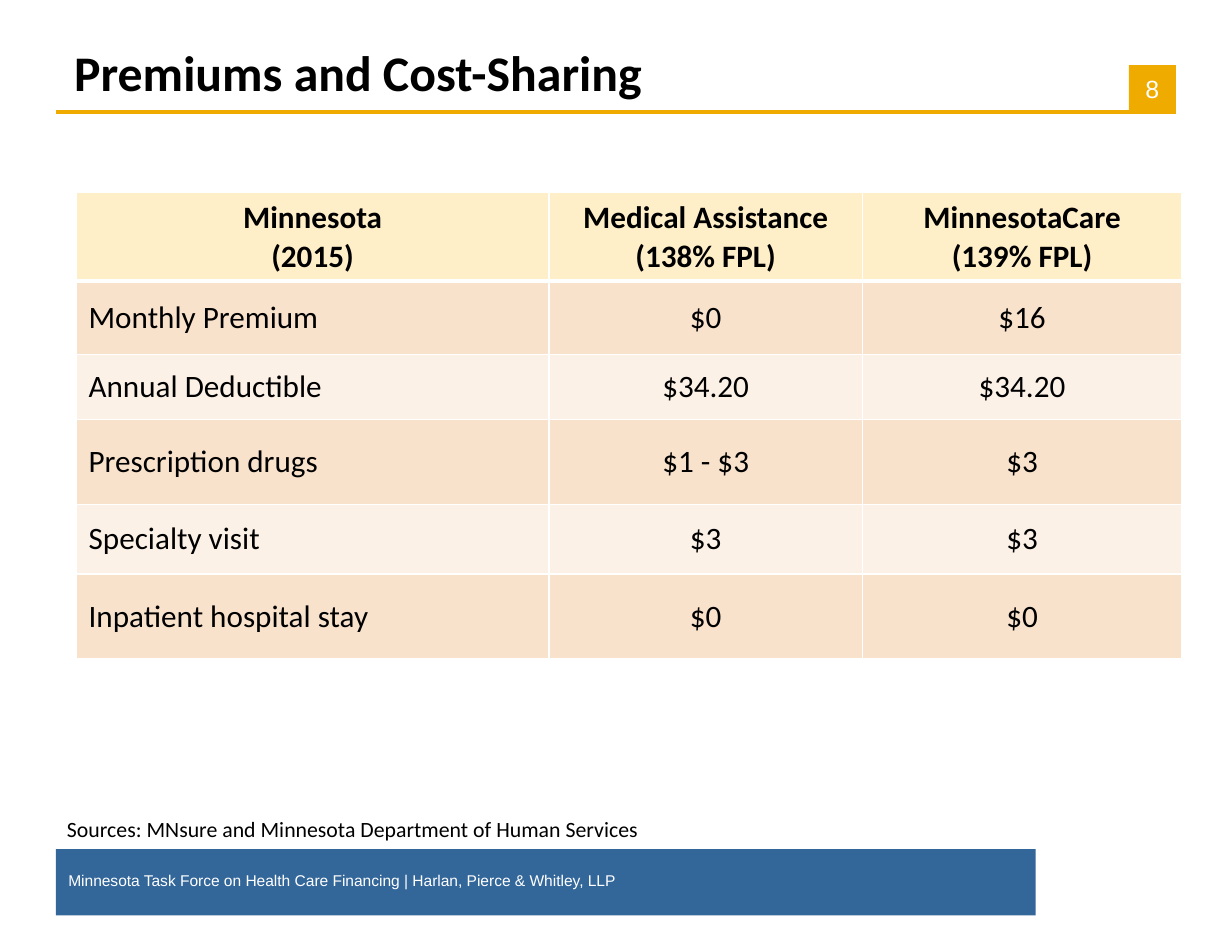
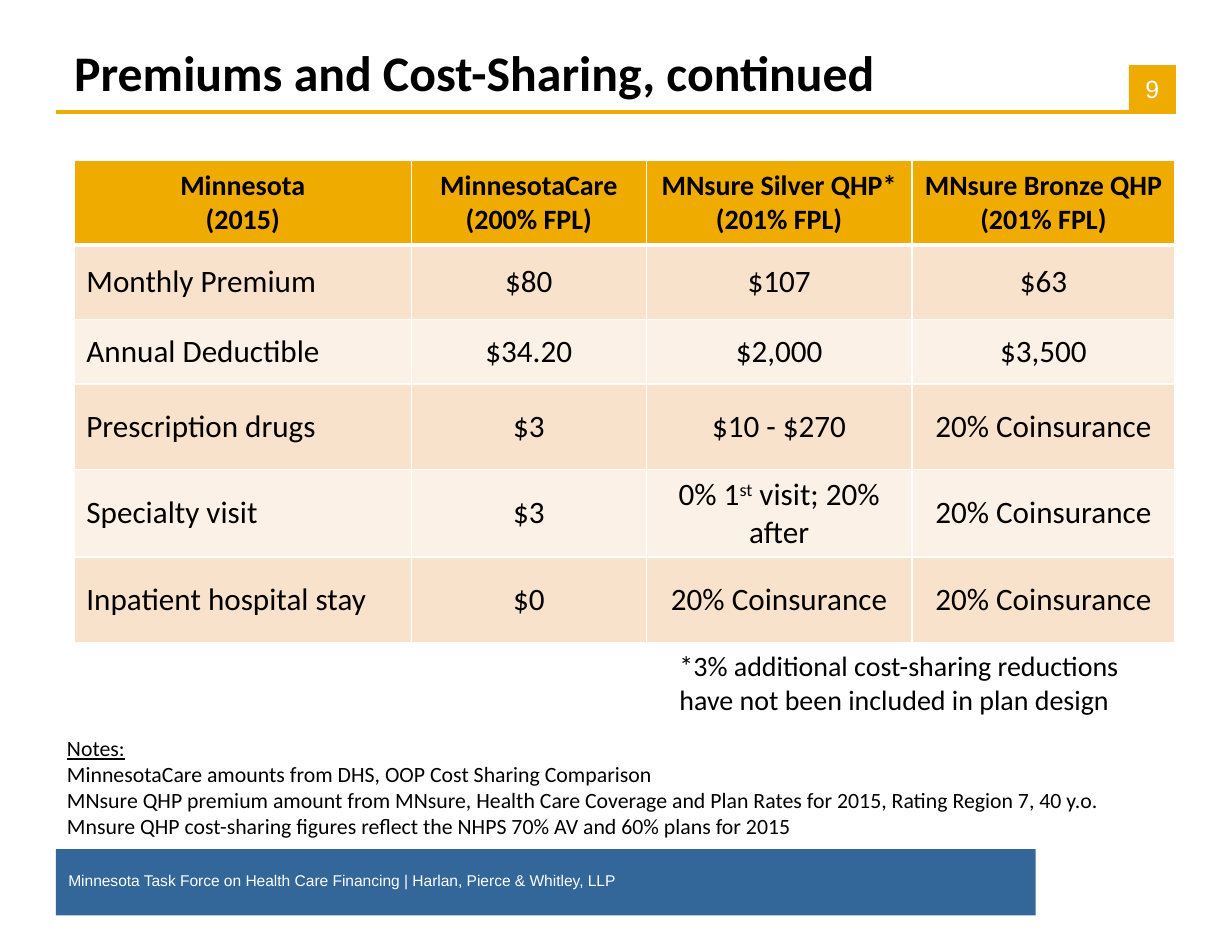
from pptx import Presentation
from pptx.dml.color import RGBColor
from pptx.enum.shapes import MSO_CONNECTOR, MSO_SHAPE
from pptx.enum.text import MSO_ANCHOR as ANCHOR, PP_ALIGN as ALIGN
from pptx.oxml.ns import qn
from pptx.util import Cm, Pt
from lxml.etree import SubElement

BLACK = RGBColor(0x00, 0x00, 0x00)
WHITE = RGBColor(0xFF, 0xFF, 0xFF)
GOLD = RGBColor(0xF0, 0xAB, 0x00)
BLUE = RGBColor(0x33, 0x66, 0x99)
CREAM = RGBColor(0xFF, 0xEF, 0xC9)
BANDS = (RGBColor(0xF9, 0xE2, 0xCC), RGBColor(0xFC, 0xF1, 0xE7))

TITLE = dict(name="Calibri", size=Pt(32), bold=True)
BODY = dict(name="Calibri", size=Pt(20), bold=False)
FOOTNOTE = dict(name="Calibri", size=Pt(18))
NOTE = dict(name="Calibri", size=Pt(14))
NUMBER = dict(name="Arial", size=Pt(16))
FOOTER = dict(name="Arial", size=Pt(10))

INSETS = (0.28, 0.15, 0.28, 0.15)
ROW_HEIGHTS = (1.93, 1.68, 1.47, 1.93, 1.57, 1.93)
FOOTER_TEXT = "Minnesota Task Force on Health Care Financing | Harlan, Pierce & Whitley, LLP"


def set_attrs(obj, values):
    for name, value in values.items():
        setattr(obj, name, value)


def set_insets(obj, insets):
    sides = ("margin_left", "margin_top", "margin_right", "margin_bottom")
    set_attrs(obj, {side: Cm(v) for side, v in zip(sides, insets)})


def write(tf, lines, style, color=BLACK, align=ALIGN.LEFT):
    for i, line in enumerate(lines):
        p = tf.paragraphs[0] if i == 0 else tf.add_paragraph()
        p.alignment = align
        for j, part in enumerate(line.split("^")):
            r = p.add_run()
            r.text = part
            set_attrs(r.font, style)
            r.font.color.rgb = color
            if j % 2:
                r.font._element.set("baseline", "30000")


def add_text(s, box, lines, style, color=BLACK, anchor=ANCHOR.TOP, insets=INSETS):
    tf = s.shapes.add_textbox(*map(Cm, box)).text_frame
    set_attrs(tf, dict(word_wrap=True, vertical_anchor=anchor))
    set_insets(tf, insets)
    write(tf, lines, style, color)
    return tf


def add_block(s, box, color):
    sp = s.shapes.add_shape(MSO_SHAPE.RECTANGLE, *map(Cm, box))
    sp.shadow.inherit = False
    sp.fill.solid()
    sp.fill.fore_color.rgb = color
    sp.line.fill.background()
    return sp


def add_rule(s, x1, x2, y):
    line = s.shapes.add_connector(MSO_CONNECTOR.STRAIGHT, Cm(x1), Cm(y), Cm(x2), Cm(y))
    line.line.color.rgb = GOLD
    line.line.width = Pt(2)
    SubElement(line._element.spPr, qn("a:effectLst"))


def set_borders(cell, widths):
    tc_pr = cell._tc.get_or_add_tcPr()
    for side, width in widths.items():
        ln = SubElement(tc_pr, qn(f"a:ln{side}"), w=str(Pt(width)))
        fill = SubElement(ln, qn("a:solidFill"))
        SubElement(fill, qn("a:srgbClr"), val=str(WHITE))


def add_cost_table(s, left, top, col_widths, rows, header_fill, header_size):
    frame = s.shapes.add_table(len(rows), len(col_widths), Cm(left), Cm(top),
                               Cm(sum(col_widths)), Cm(sum(ROW_HEIGHTS)))
    table = frame.table
    table.horz_banding = False
    for col, width in zip(table.columns, col_widths):
        col.width = Cm(width)
    for row, height in zip(table.rows, ROW_HEIGHTS):
        row.height = Cm(height)
    header_style = BODY | dict(size=Pt(header_size), bold=True)
    for i, values in enumerate(rows):
        fill = BANDS[(i - 1) % 2] if i else header_fill
        style = BODY if i else header_style
        for j, value in enumerate(values):
            cell = table.cell(i, j)
            set_borders(cell, dict(L=1, R=1, T=3 if i == 1 else 1, B=1 if i else 3))
            cell.fill.solid()
            cell.fill.fore_color.rgb = fill
            cell.vertical_anchor = ANCHOR.MIDDLE
            set_insets(cell, INSETS)
            align = ALIGN.LEFT if i and j == 0 else ALIGN.CENTER
            write(cell.text_frame, value.split("\n"), style, align=align)


def add_slide(prs, title, number):
    s = prs.slides.add_slide(prs.slide_layouts[6])
    add_block(s, (1.27, 19.26, 22.22, 1.5), BLUE)
    add_rule(s, 1.27, 26.67, 2.54)
    tf = add_block(s, (25.6, 1.48, 1.07, 1.06), GOLD).text_frame
    set_attrs(tf, dict(word_wrap=False, vertical_anchor=ANCHOR.MIDDLE))
    set_insets(tf, (0, 0, 0, 0))
    write(tf, [str(number)], NUMBER, WHITE, ALIGN.CENTER)
    add_text(s, (1.4, 0.81, 25.15, 1.65), [title], TITLE, anchor=ANCHOR.BOTTOM)
    tf = add_text(s, (1.27, 19.69, 17.98, 0.64), [FOOTER_TEXT], FOOTER, WHITE,
                  ANCHOR.MIDDLE, (0.28, 0, 0, 0))
    tf.paragraphs[0].line_spacing = 0.8
    return s


def add_assistance_slide(prs):
    s = add_slide(prs, "Premiums and Cost-Sharing", 8)
    rows = [
        ("Minnesota\n(2015)", "Medical Assistance\n(138% FPL)", "MinnesotaCare\n(139% FPL)"),
        ("Monthly Premium", "$0", "$16"),
        ("Annual Deductible", "$34.20", "$34.20"),
        ("Prescription drugs", "$1 - $3", "$3"),
        ("Specialty visit", "$3", "$3"),
        ("Inpatient hospital stay", "$0", "$0"),
    ]
    add_cost_table(s, 1.73, 4.37, (10.72, 7.11, 7.24), rows, CREAM, 20)
    add_text(s, (1.24, 18.36, 26.7, 0.89),
             ["Sources: MNsure and Minnesota Department of Human Services"], NOTE)


def add_marketplace_slide(prs):
    s = add_slide(prs, "Premiums and Cost-Sharing, continued", 9)
    rows = [
        ("Minnesota\n(2015)", "MinnesotaCare\n(200% FPL)",
         "MNsure Silver QHP*\n(201% FPL)", "MNsure Bronze QHP\n(201% FPL)"),
        ("Monthly Premium", "$80", "$107", "$63"),
        ("Annual Deductible", "$34.20", "$2,000", "$3,500"),
        ("Prescription drugs", "$3", "$10 - $270", "20% Coinsurance"),
        ("Specialty visit", "$3", "0% 1^st^ visit; 20% after", "20% Coinsurance"),
        ("Inpatient hospital stay", "$0", "20% Coinsurance", "20% Coinsurance"),
    ]
    add_cost_table(s, 1.68, 3.63, (7.65, 5.33, 6.02, 5.97), rows, GOLD, 18)
    add_text(s, (15.16, 14.58, 11.3, 1.8),
             ["*3% additional cost-sharing reductions have not been included in plan design"],
             FOOTNOTE, insets=(0.25, 0.13, 0.25, 0.13))
    notes = [
        "Notes:",
        "MinnesotaCare amounts from DHS, OOP Cost Sharing Comparison",
        "MNsure QHP premium amount from MNsure, Health Care Coverage and Plan Rates "
        "for 2015, Rating Region 7, 40 y.o.",
        "Mnsure QHP cost-sharing figures reflect the NHPS 70% AV and 60% plans for 2015",
    ]
    tf = add_text(s, (1.24, 16.51, 26.7, 2.67), notes, NOTE)
    tf.paragraphs[0].runs[0].font.underline = True


def main():
    prs = Presentation()
    set_attrs(prs, dict(slide_width=Cm(27.94), slide_height=Cm(21.59)))
    add_assistance_slide(prs)
    add_marketplace_slide(prs)
    prs.save("out.pptx")


if __name__ == "__main__":
    main()
